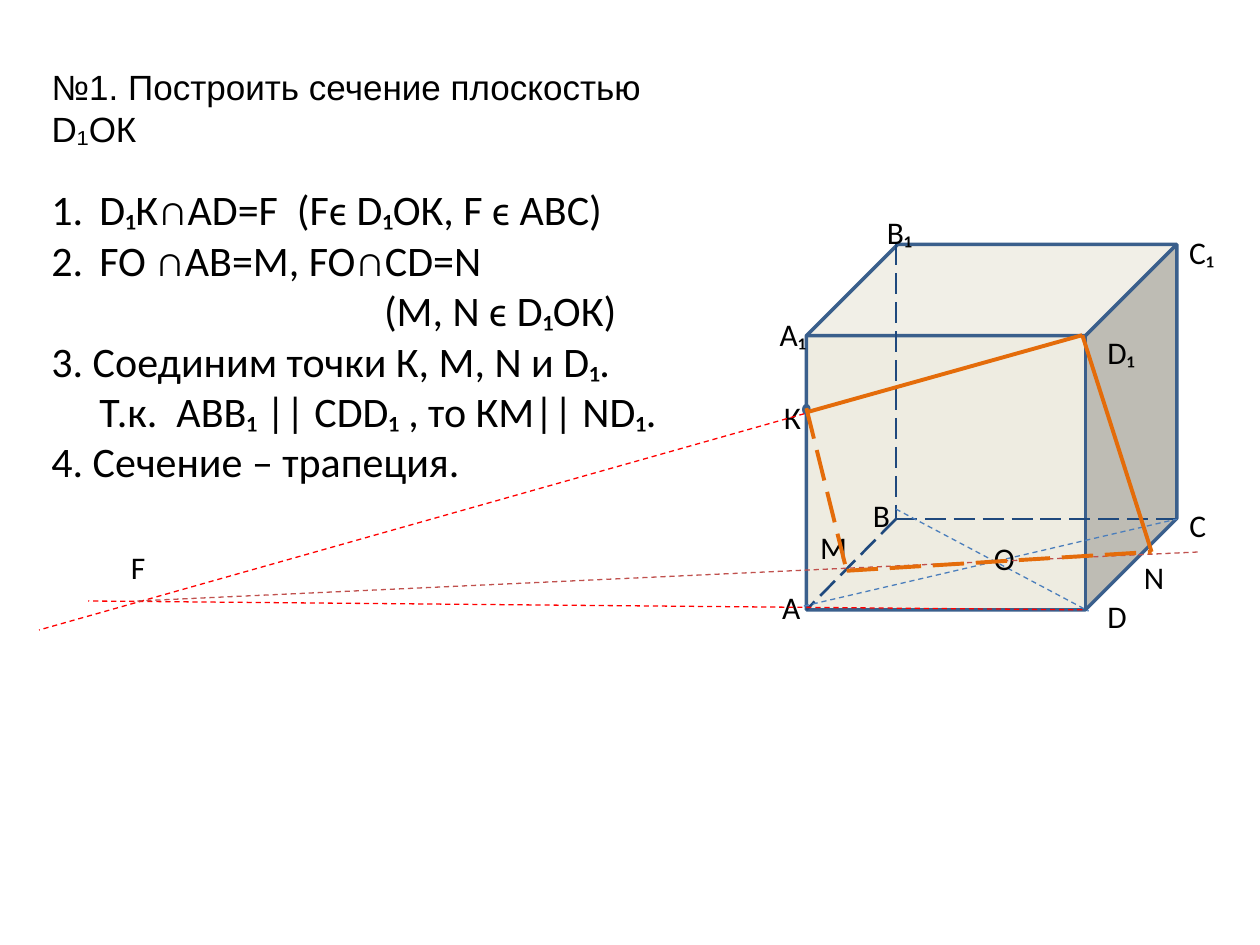
"""Build a geometry slide: the section of a cube by a plane, with its solution steps."""
from typing import NamedTuple, Optional

from lxml.etree import SubElement
from pptx import Presentation
from pptx.dml.color import RGBColor
from pptx.enum.dml import MSO_LINE
from pptx.enum.shapes import MSO_CONNECTOR, MSO_SHAPE
from pptx.enum.text import MSO_ANCHOR, MSO_AUTO_SIZE, PP_ALIGN
from pptx.oxml.ns import qn
from pptx.util import Inches, Pt

COLS, ROWS = 100, 75
BLACK, WHITE, EDGE, HIDDEN = "000000", "FFFFFF", "3A5F8C", "1F497D"
DIAGONAL, TRACE, TRACE_FO, SECTION = "4B7EBC", "FF0000", "C0504D", "E46C0A"
DASH, LONG = MSO_LINE.DASH, MSO_LINE.LONG_DASH

A, B, C, D = (64, 48.4), (71.1, 41.2), (93.4, 41.2), (85.9, 48.4)
B1, D1 = (71.1, 19.4), (85.9, 26.6)
K, M, N, F = (64, 32.4), (67.2, 45.3), (91.4, 43.8), (10.9, 47.7)


class Box(NamedTuple):
    col: float
    row: float
    cols: float
    rows: float


class Label(NamedTuple):
    text: str
    box: Box


class Segment(NamedTuple):
    start: tuple
    end: tuple
    color: str
    width: float
    dash: Optional[MSO_LINE] = None


class Step(NamedTuple):
    text: str
    left: float = 0.38
    indent: float = -0.38
    numbered: bool = False


CUBE_LABELS = [
    Label("А₁", Box(60.9, 24.5, 4.6, 3.2)),
    Label("C₁", Box(93.4, 18, 4.3, 3.7)),
    Label("С", Box(93.4, 39.7, 2.2, 3.7)),
    Label("B₁", Box(69.4, 16.4, 5, 2.9)),
    Label("B", Box(68.3, 38.9, 2.9, 2.9)),
    Label("D", Box(86.9, 46.9, 2.8, 2.9)),
    Label("D₁", Box(86.9, 25.9, 4.5, 3.7)),
    Label("К", Box(61.5, 31.1, 1.7, 2.9)),
    Label("О", Box(77.9, 42.3, 2.3, 2.9)),
]
SECTION_LABELS = [
    Label("F", Box(9.4, 43, 2.3, 4)),
    Label("M", Box(64.1, 41.4, 3.9, 4)),
    Label("N", Box(89.8, 43.8, 3.1, 4)),
]
CUBE_SEGMENTS = [
    Segment(B1, B, HIDDEN, 1.5, LONG),
    Segment(B, C, HIDDEN, 1.5, LONG),
    Segment(B, A, HIDDEN, 1.5, LONG),
    Segment((71.1, 40.4), (86.4, 48.5), DIAGONAL, 0.75, DASH),
    Segment((63.8, 48.1), C, DIAGONAL, 0.75, DASH),
]
SECTION_SEGMENTS = [
    Segment(D1, (3.1, 50), TRACE, 0.75, DASH),
    Segment(D, (7, 47.7), TRACE, 0.75, DASH),
    Segment(F, (95.3, 43.8), TRACE_FO, 0.75, DASH),
    Segment(K, M, SECTION, 2.25, LONG),
    Segment(M, N, SECTION, 2.25, LONG),
    Segment(D1, N, SECTION, 2.25),
    Segment((64.1, 32.7), D1, SECTION, 2.25),
]
STEPS = [
    Step("D₁К∩АD=F  (Fϵ D₁ОК, F ϵ ABC)", numbered=True),
    Step("FO ∩AB=M, FO∩CD=N", numbered=True),
    Step("(M, N ϵ D₁ОК)", left=2.64, indent=0),
    Step("3. Соединим точки К, М, N и D₁. Т.к.  АВВ₁ || СDD₁ , то КМ|| ND₁."),
    Step("4. Cечение – трапеция."),
]


def rgb(value: str) -> RGBColor:
    """Turn a hex string into a colour."""
    return RGBColor.from_string(value)


def place(*cells: float) -> list:
    """Turn column and row numbers, in turn, into slide lengths."""
    sizes = (Inches(10 / COLS), Inches(7.5 / ROWS))
    return [round(n * sizes[i % 2]) for i, n in enumerate(cells)]


def set_font(p, name: str, size: float) -> None:
    """Format a whole paragraph as black left-aligned text."""
    p.alignment = PP_ALIGN.LEFT
    p.font.name, p.font.size = name, Pt(size)
    p.font.color.rgb = rgb(BLACK)


def add_solid(shapes, kind: MSO_SHAPE, box: Box, fill: str, line: str, width: float):
    """Draw a filled preset shape without a shadow."""
    sp = shapes.add_shape(kind, *place(*box))
    sp.shadow.inherit = False
    sp.fill.solid()
    sp.fill.fore_color.rgb = rgb(fill)
    sp.line.color.rgb = rgb(line)
    sp.line.width = Pt(width)
    return sp


def write_label(sp, text: str) -> None:
    """Write a vertex name in a shape."""
    tf = sp.text_frame
    tf.word_wrap, tf.vertical_anchor = True, MSO_ANCHOR.TOP
    p = tf.paragraphs[0]
    p.text = text
    set_font(p, "Calibri", 18)


def add_label(shapes, label: Label) -> None:
    """Draw a vertex name in a text box."""
    write_label(shapes.add_textbox(*place(*label.box)), label.text)


def add_segment(shapes, seg: Segment) -> None:
    """Draw a straight line between two points."""
    cx = shapes.add_connector(MSO_CONNECTOR.STRAIGHT, *place(*seg.start, *seg.end))
    cx.line.color.rgb = rgb(seg.color)
    cx.line.width = Pt(seg.width)
    if seg.dash:
        cx.line.dash_style = seg.dash
    SubElement(cx._element.spPr, qn("a:effectLst"))


def add_cube(shapes) -> None:
    """Draw the cube with its hidden edges, diagonals and labels as one group."""
    cube = shapes.add_group_shape().shapes
    add_solid(cube, MSO_SHAPE.CUBE, Box(64, 19.4, 29.4, 29), "EEECE1", EDGE, 2)
    plate = add_solid(cube, MSO_SHAPE.RECTANGLE, Box(61.1, 46.2, 2.7, 4.6), WHITE, WHITE, 0.75)
    write_label(plate, "A")
    add_solid(cube, MSO_SHAPE.OVAL, Box(63.8, 32.2, 0.4, 0.6), "4F81BD", EDGE, 2)
    for seg in CUBE_SEGMENTS:
        add_segment(cube, seg)
    for label in CUBE_LABELS:
        add_label(cube, label)


def set_title(title, text: str) -> None:
    """Move and format the title placeholder."""
    title.left, title.top, title.width, title.height = place(3.1, 4.7, 51.6, 7.4)
    tf = title.text_frame
    tf.text = text
    tf.word_wrap, tf.auto_size = True, MSO_AUTO_SIZE.NONE
    tf.vertical_anchor = MSO_ANCHOR.TOP
    set_font(tf.paragraphs[0], "Arial", 20)


def add_steps(shapes) -> None:
    """Write the solution steps with hanging indents."""
    tf = shapes.add_textbox(*place(3.1, 14.1, 51.6, 25.6)).text_frame
    tf.word_wrap = True
    for i, step in enumerate(STEPS):
        p = tf.add_paragraph() if i else tf.paragraphs[0]
        p.text = step.text
        set_font(p, "Calibri", 24)
        pPr = p._p.get_or_add_pPr()
        pPr.set("marL", str(Inches(step.left)))
        pPr.set("indent", str(Inches(step.indent)))
        if step.numbered:
            bullet = pPr.makeelement(qn("a:buAutoNum"), {"type": "arabicPeriod"})
            pPr.insert(0, bullet)


def main() -> None:
    """Build and save the slide."""
    prs = Presentation()
    prs.slide_width, prs.slide_height = Inches(10), Inches(7.5)
    s = prs.slides.add_slide(prs.slide_layouts[5])
    set_title(s.shapes.title, "№1. Построить сечение плоскостью D₁ОК")
    add_cube(s.shapes)
    add_steps(s.shapes)
    for label in SECTION_LABELS:
        add_label(s.shapes, label)
    for seg in SECTION_SEGMENTS:
        add_segment(s.shapes, seg)
    prs.save("out.pptx")


if __name__ == "__main__":
    main()
